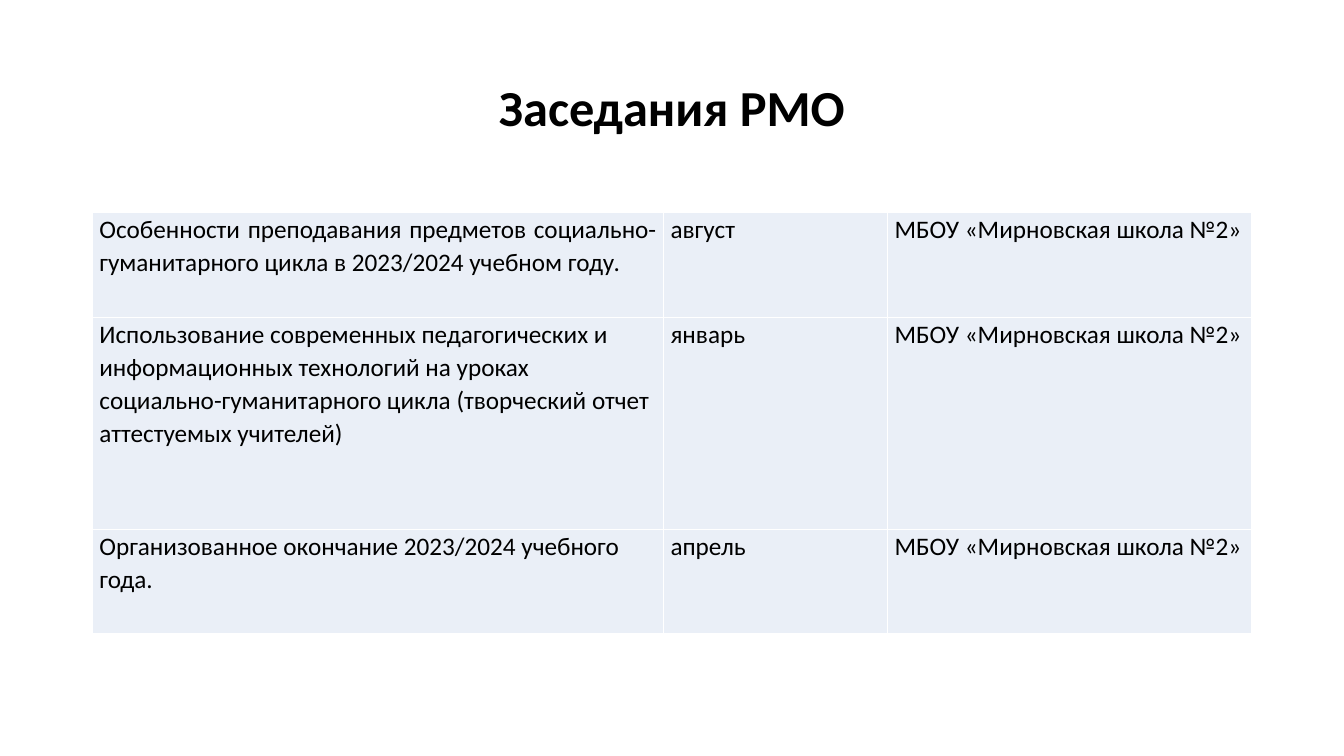
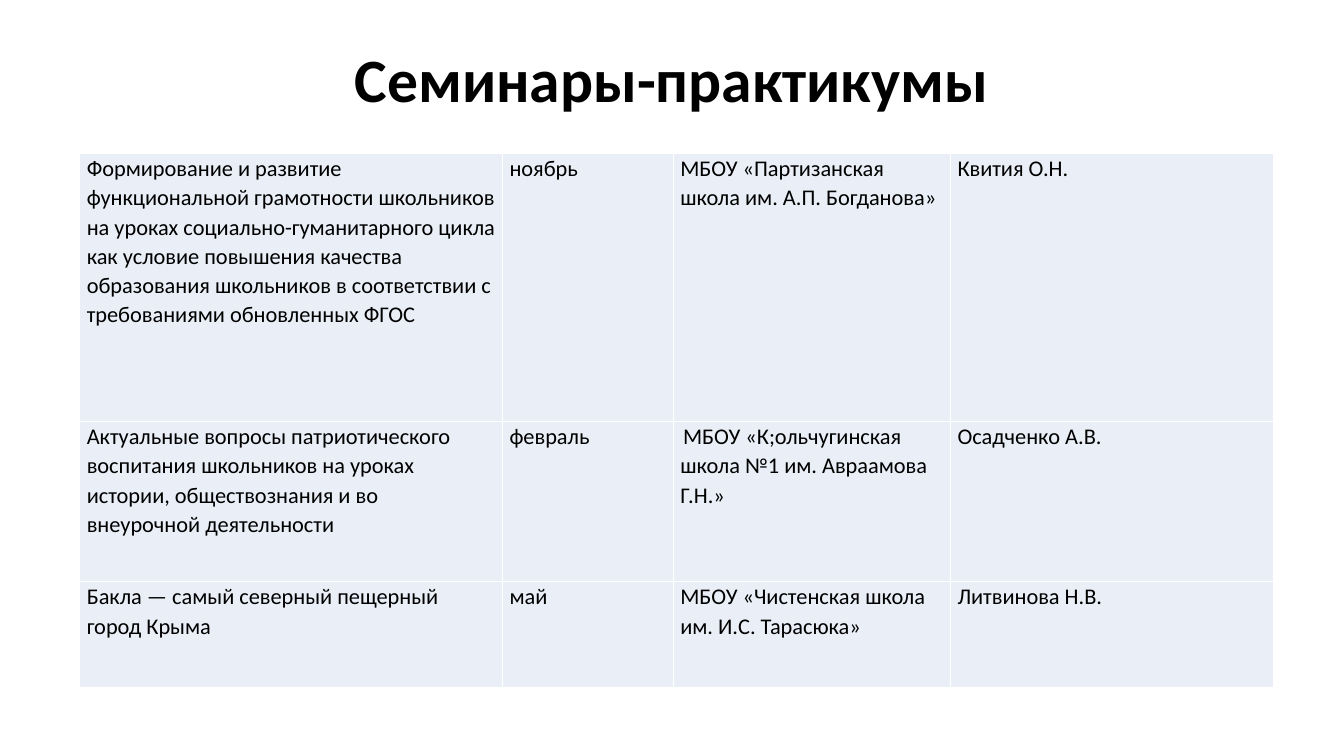
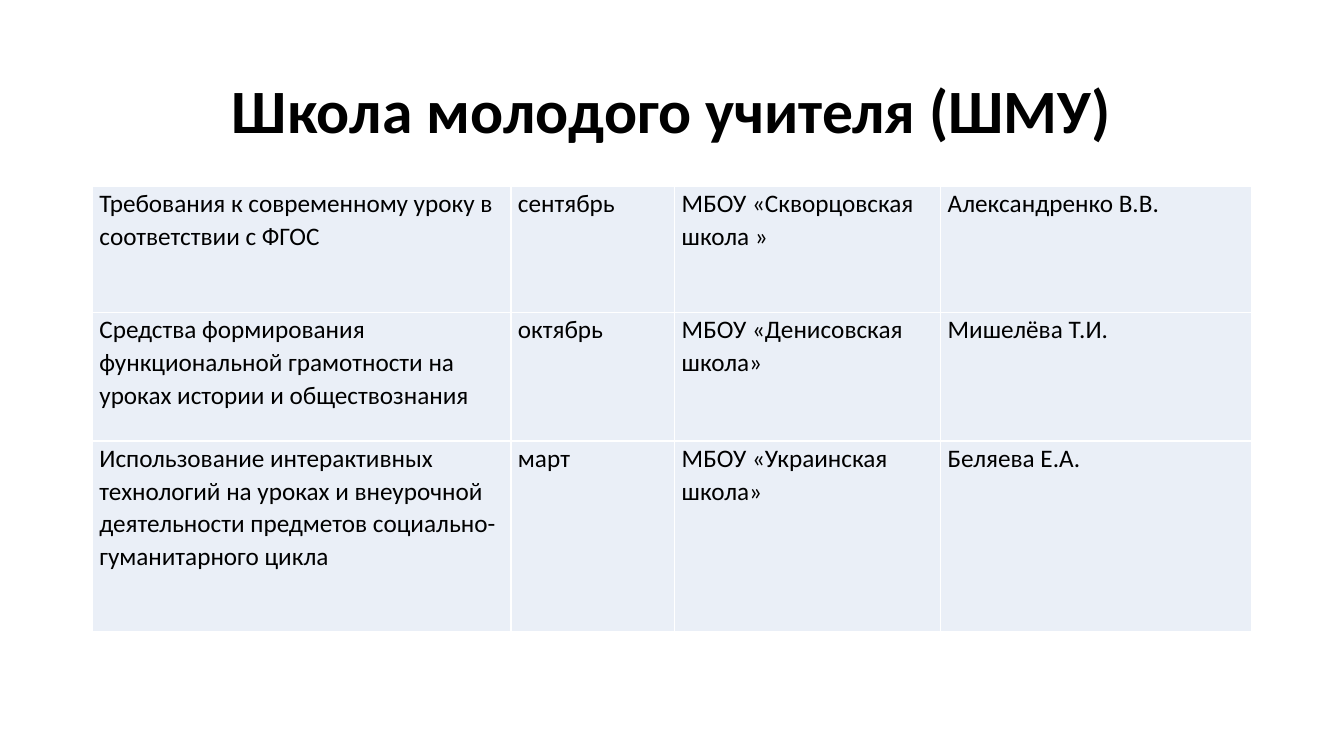
import pptx
import pptx.dml.color
import pptx.enum.text
import pptx.oxml
import pptx.oxml.ns
import pptx.util

Pt = pptx.util.Pt
ALIGN = pptx.enum.text.PP_ALIGN
ANCHOR = pptx.enum.text.MSO_ANCHOR
BLACK = pptx.dml.color.RGBColor(0x00, 0x00, 0x00)
WHITE = pptx.dml.color.RGBColor(0xFF, 0xFF, 0xFF)
PALE_BLUE = pptx.dml.color.RGBColor(0xEA, 0xEF, 0xF7)
FONT = "Calibri"
TITLE_ONLY = 5
CELL_INSET = 5

MEETINGS = [
    ["Особенности преподавания предметов социально-гуманитарного цикла в 2023/2024 учебном году.",
     "август", "МБОУ «Мирновская школа №2»"],
    ["Использование современных педагогических и информационных технологий на уроках "
     "социально-гуманитарного цикла (творческий отчет аттестуемых учителей)",
     "январь", "МБОУ «Мирновская школа №2»"],
    ["Организованное окончание 2023/2024 учебного года.",
     "апрель", "МБОУ «Мирновская школа №2»"],
]
SEMINARS = [
    ["Формирование и развитие функциональной грамотности школьников на уроках "
     "социально-гуманитарного цикла как условие повышения качества образования "
     "школьников в соответствии с требованиями обновленных ФГОС",
     "ноябрь", "МБОУ «Партизанская школа им. А.П. Богданова»", "Квития О.Н."],
    ["Актуальные вопросы патриотического воспитания школьников на уроках истории, "
     "обществознания и во внеурочной деятельности",
     "февраль", "МБОУ «К;ольчугинская школа №1 им. Авраамова Г.Н.»", "Осадченко А.В."],
    ["Бакла — самый северный пещерный город Крыма",
     "май", "МБОУ «Чистенская школа им. И.С. Тарасюка»", "Литвинова Н.В."],
]
YOUNG_TEACHERS = [
    ["Требования к современному уроку в соответствии с ФГОС",
     "сентябрь", "МБОУ «Скворцовская школа »", "Александренко В.В."],
    ["Средства формирования функциональной грамотности на уроках истории и обществознания",
     "октябрь", "МБОУ «Денисовская школа»", "Мишелёва Т.И."],
    ["Использование интерактивных технологий на уроках и внеурочной деятельности "
     "предметов социально-гуманитарного цикла",
     "март", "МБОУ «Украинская школа»", "Беляева Е.А."],
]


def write_text(frame, text, size, bold=False, align=ALIGN.LEFT, spacing=1.07):
    para = frame.paragraphs[0]
    para.alignment = align
    para.line_spacing = spacing
    span = para.add_run()
    span.text = text
    span.font.name = FONT
    span.font.size = Pt(size)
    span.font.bold = bold
    span.font.color.rgb = BLACK


def add_page(deck, title, top, height, size=44, spacing=0.9):
    page = deck.slides.add_slide(deck.slide_layouts[TITLE_ONLY])
    box = page.shapes.title
    box.left, box.top, box.width, box.height = Pt(66), Pt(top), Pt(828), Pt(height)
    box.text_frame.vertical_anchor = ANCHOR.MIDDLE
    box.text_frame.word_wrap = True
    write_text(box.text_frame, title, size, bold=True, align=ALIGN.CENTER, spacing=spacing)
    return page


def set_borders(cell):
    properties = cell._tc.get_or_add_tcPr()
    for side in ("lnL", "lnR", "lnT", "lnB"):
        properties.append(pptx.oxml.parse_xml(
            f'<a:{side} {pptx.oxml.ns.nsdecls("a")} w="{Pt(1)}">'
            f'<a:solidFill><a:srgbClr val="{WHITE}"/></a:solidFill></a:{side}>'))


def fill_cell(cell, text, size):
    cell.margin_left = cell.margin_right = Pt(CELL_INSET)
    cell.margin_top = cell.margin_bottom = 0
    cell.vertical_anchor = ANCHOR.TOP
    set_borders(cell)
    cell.fill.solid()
    cell.fill.fore_color.rgb = PALE_BLUE
    write_text(cell.text_frame, text, size)


def add_schedule(page, rows, left, top, widths, heights, size=18):
    table = page.shapes.add_table(
        len(rows), len(widths), Pt(left), Pt(top), Pt(sum(widths)), Pt(sum(heights))).table
    table.first_row = False
    table.horz_banding = False
    for column, width in zip(table.columns, widths):
        column.width = Pt(width)
    for row, height, texts in zip(table.rows, heights, rows):
        row.height = Pt(height)
        for cell, text in zip(row.cells, texts):
            fill_cell(cell, text, size)
    return table


def main():
    deck = pptx.Presentation()
    deck.slide_width, deck.slide_height = Pt(960), Pt(540)

    page = add_page(deck, "Заседания РМО", 50.4, 51, size=36, spacing=1.0)
    table = add_schedule(page, MEETINGS, 66, 152, [408, 160, 260], [75, 151, 75])
    table.cell(0, 0).text_frame.paragraphs[0].alignment = ALIGN.JUSTIFY

    page = add_page(deck, "Семинары-практикумы", 29, 60)
    table = add_schedule(page, SEMINARS, 57, 109.5, [302, 122, 198, 231],
                         [191.5, 114.5, 75.5], size=16)
    para = table.cell(1, 2).text_frame.paragraphs[0]
    para._p.get_or_add_pPr().set("indent", str(Pt(2)))

    page = add_page(deck, "Школа молодого учителя (ШМУ)", 29, 104)
    add_schedule(page, YOUNG_TEACHERS, 66, 133, [299, 117, 190, 222], [90, 92, 136])

    deck.save("out.pptx")


if __name__ == "__main__":
    main()
